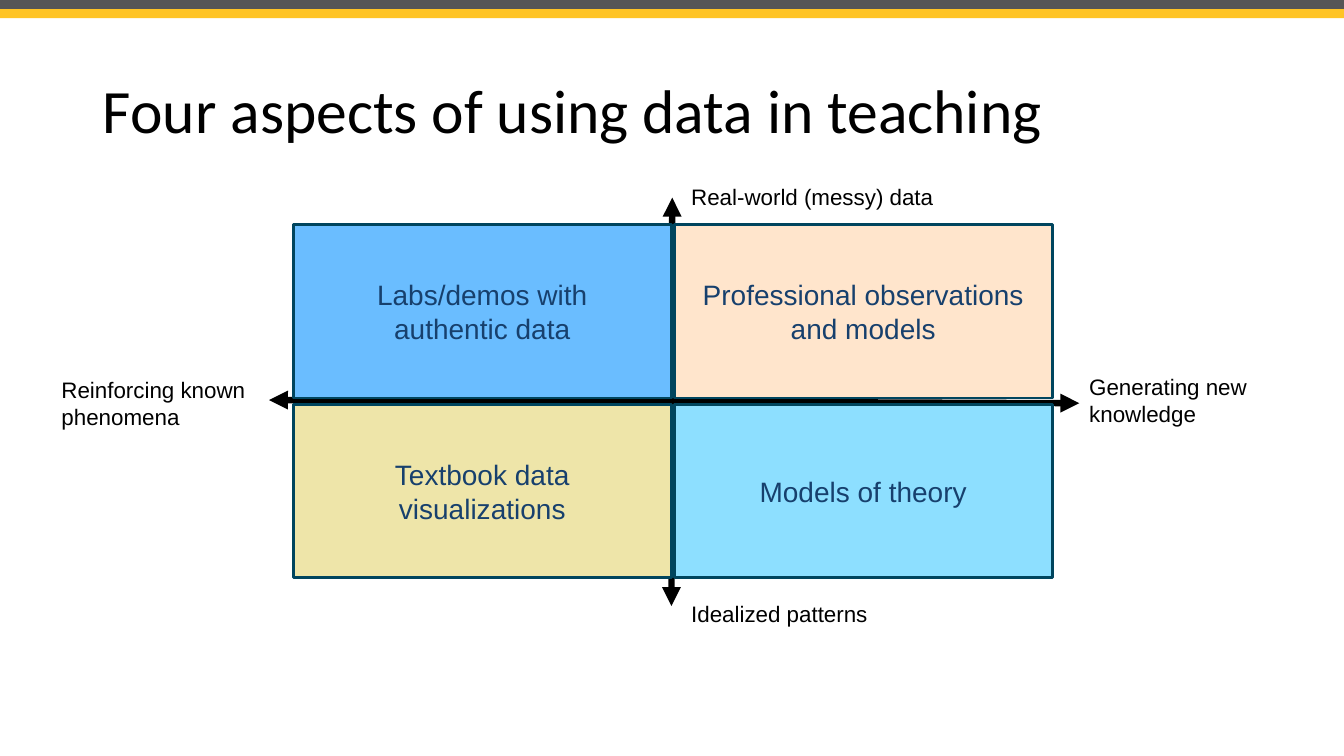
from lxml.etree import SubElement
from pptx import Presentation
from pptx.dml.color import RGBColor
from pptx.enum.shapes import MSO_CONNECTOR as Connector, MSO_SHAPE as Shape
from pptx.enum.text import MSO_ANCHOR as Anchor, MSO_AUTO_SIZE as AutoSize, PP_ALIGN as Align
from pptx.oxml.ns import qn
from pptx.util import Cm, Pt

BLACK = RGBColor(0x00, 0x00, 0x00)
GREY = RGBColor(0x56, 0x56, 0x56)
GOLD = RGBColor(0xFF, 0xC4, 0x25)
NAVY = RGBColor(0x17, 0x40, 0x6D)
TEAL = RGBColor(0x00, 0x45, 0x5E)
BLUE = RGBColor(0x6A, 0xBD, 0xFF)
PEACH = RGBColor(0xFF, 0xE5, 0xCC)
SAND = RGBColor(0xEE, 0xE5, 0xA9)
SKY = RGBColor(0x8D, 0xDF, 0xFF)

SLIDE_WIDTH, SLIDE_HEIGHT = 33.87, 19.05
BAND_HEIGHT = 0.23
GRID_LEFT, GRID_TOP = 7.39, 5.66
COLUMN_STEP, ROW_STEP = 9.6, 4.53
QUADRANT_WIDTH, QUADRANT_HEIGHT = 9.53, 4.37

QUADRANTS = [
    [("Labs/demos with\nauthentic data", BLUE),
     ("Professional observations and models", PEACH)],
    [("Textbook data\nvisualizations", SAND),
     ("Models of theory", SKY)],
]
AXES = [(6.78, 10.08, 27.2, 10.16), (16.94, 4.98, 16.92, 15.27)]
AXIS_LABELS = [
    ("Reinforcing known phenomena", 1.3, 9.35, 5.21, 1.63),
    ("Generating new knowledge", 27.2, 9.27, 5.21, 1.63),
    ("Real-world (messy) data", 17.17, 4.5, 6.71, 0.94),
    ("Idealized patterns", 17.17, 14.99, 5.21, 0.94),
]


def style_text(frame, size, color, align, font="Arial"):
    """Format every run of a text frame."""
    for para in frame.paragraphs:
        para.alignment = align
        for span in para.runs:
            span.font.name = font
            span.font.size = Pt(size)
            span.font.color.rgb = color


def add_rectangle(page, left, top, width, height, fill):
    """Add a flat rectangle without an outline."""
    box = page.shapes.add_shape(
        Shape.RECTANGLE, Cm(left), Cm(top), Cm(width), Cm(height))
    box.shadow.inherit = False
    box.fill.solid()
    box.fill.fore_color.rgb = fill
    box.line.fill.background()
    return box


def add_title(page, text):
    """Fill and place the title placeholder."""
    title = page.shapes.title
    title.left, title.top = Cm(2.34), Cm(1.02)
    title.width, title.height = Cm(29.21), Cm(3.68)
    frame = title.text_frame
    frame.text = text
    frame.word_wrap = True
    frame.auto_size = AutoSize.NONE
    frame.vertical_anchor = Anchor.MIDDLE
    frame.paragraphs[0].line_spacing = 0.9
    style_text(frame, 44, BLACK, Align.LEFT, "Calibri")


def add_label(page, text, left, top, width, height):
    """Add a label beside one end of an axis."""
    box = page.shapes.add_textbox(Cm(left), Cm(top), Cm(width), Cm(height))
    frame = box.text_frame
    frame.text = text
    frame.word_wrap = True
    style_text(frame, 16, BLACK, Align.LEFT)


def add_axis(page, start_x, start_y, end_x, end_y):
    """Add a thick line with an arrowhead at both ends."""
    axis = page.shapes.add_connector(
        Connector.STRAIGHT, Cm(start_x), Cm(start_y), Cm(end_x), Cm(end_y))
    axis.line.color.rgb = BLACK
    axis.line.width = Pt(4.5)
    properties = axis._element.spPr
    outline = properties.find(qn("a:ln"))
    for end in ("a:headEnd", "a:tailEnd"):
        SubElement(outline, qn(end), type="triangle")
    SubElement(properties, qn("a:effectLst"))


def add_quadrant(page, row, column, text, fill):
    """Add one outlined quadrant at its place in the grid."""
    box = add_rectangle(
        page, GRID_LEFT + column * COLUMN_STEP, GRID_TOP + row * ROW_STEP,
        QUADRANT_WIDTH, QUADRANT_HEIGHT, fill)
    box.line.color.rgb = TEAL
    box.line.width = Pt(2)
    frame = box.text_frame
    frame.text = text
    frame.word_wrap = True
    frame.vertical_anchor = Anchor.MIDDLE
    style_text(frame, 20, NAVY, Align.CENTER)


def main():
    """Build the slide and save the deck."""
    deck = Presentation()
    deck.slide_width, deck.slide_height = Cm(SLIDE_WIDTH), Cm(SLIDE_HEIGHT)
    page = deck.slides.add_slide(deck.slide_layouts[5])
    for index, color in enumerate((GREY, GOLD)):
        add_rectangle(page, 0, index * BAND_HEIGHT, SLIDE_WIDTH, BAND_HEIGHT, color)
    add_title(page, "Four aspects of using data in teaching")
    for label in AXIS_LABELS:
        add_label(page, *label)
    for axis in AXES:
        add_axis(page, *axis)
    for row, quadrants in enumerate(QUADRANTS):
        for column, (text, fill) in enumerate(quadrants):
            add_quadrant(page, row, column, text, fill)
    deck.save("out.pptx")


if __name__ == "__main__":
    main()
